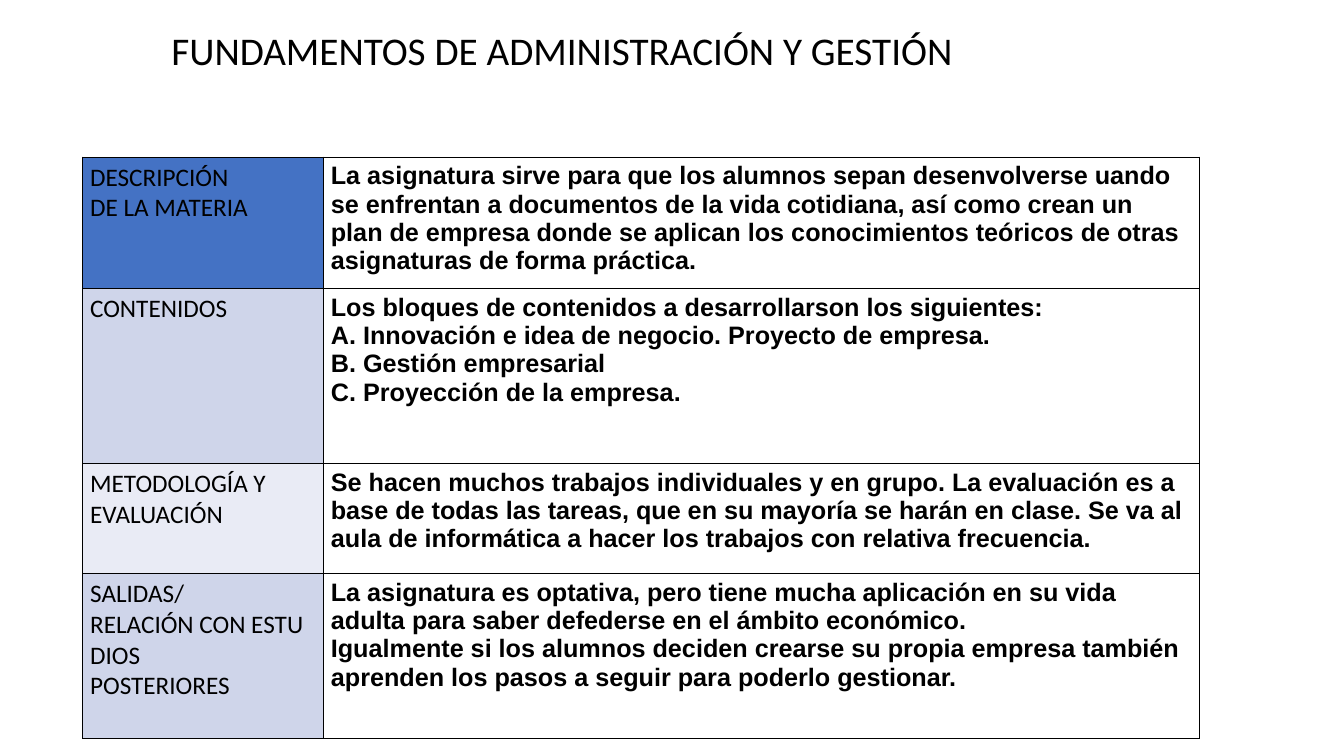
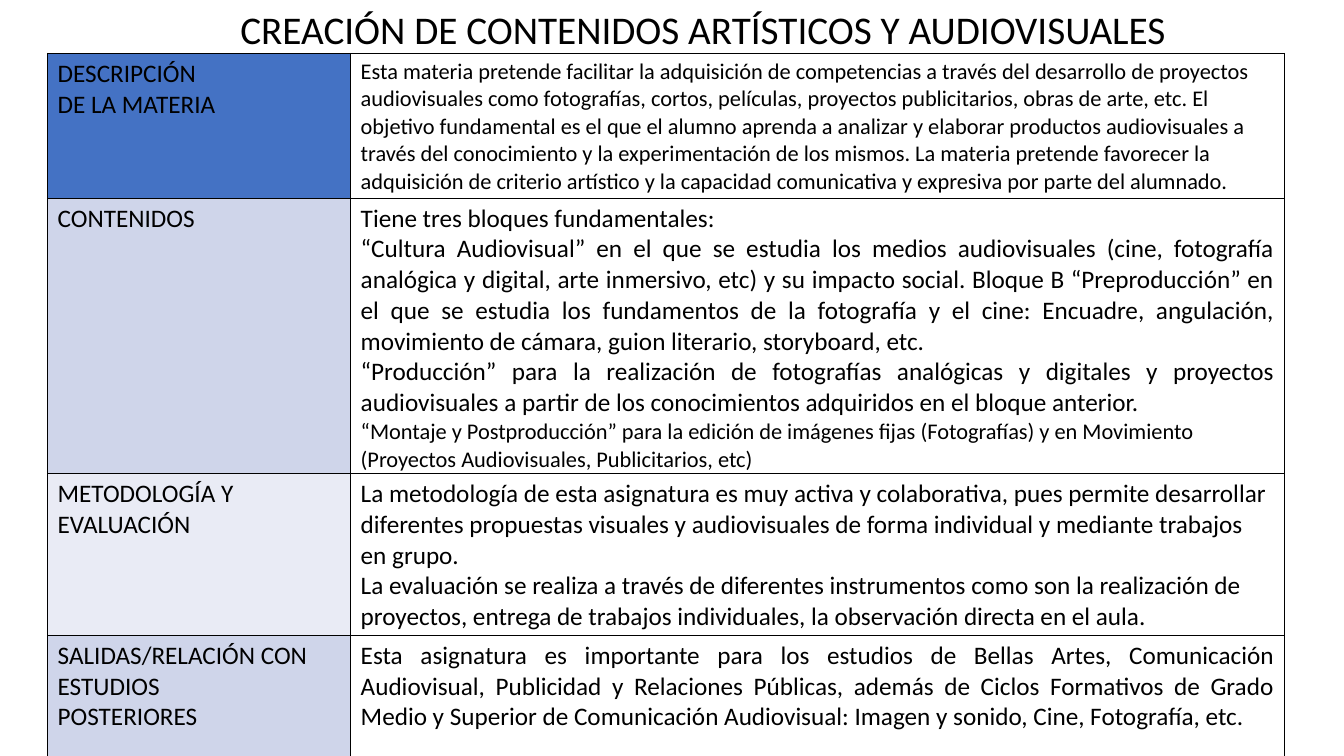
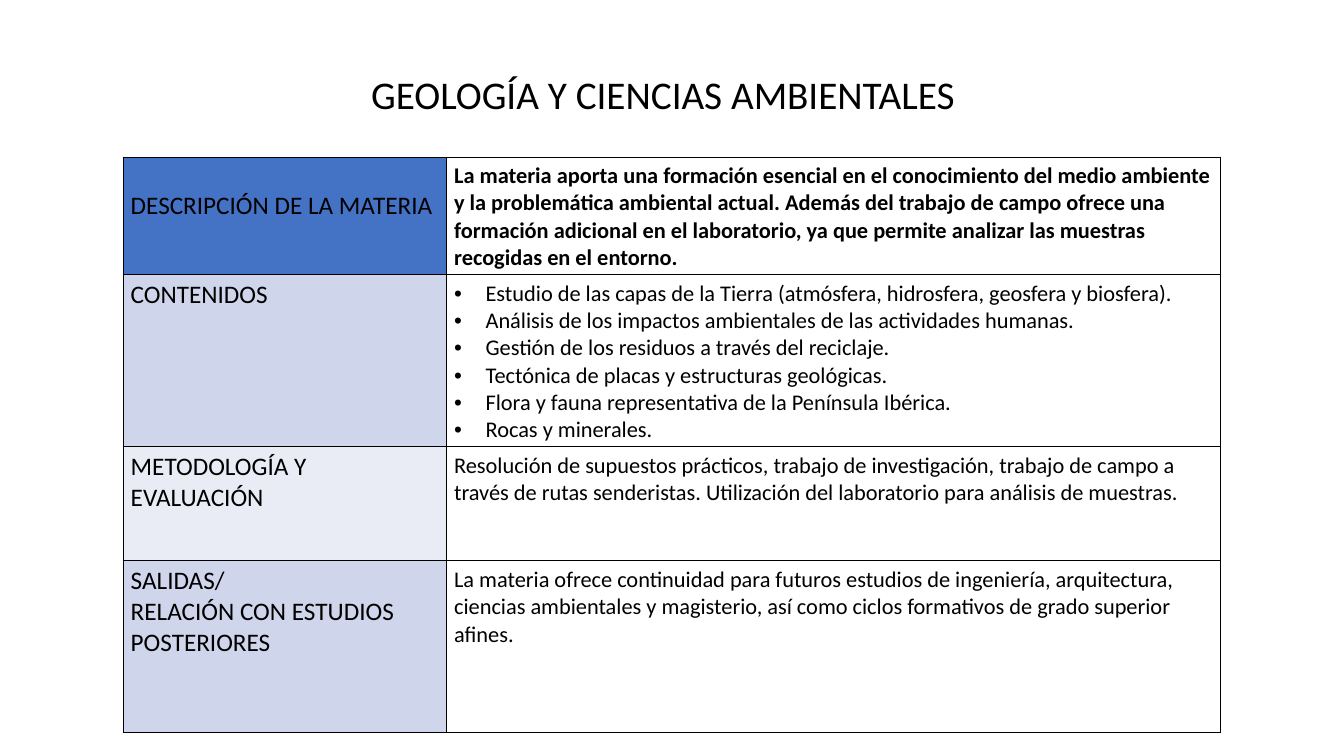
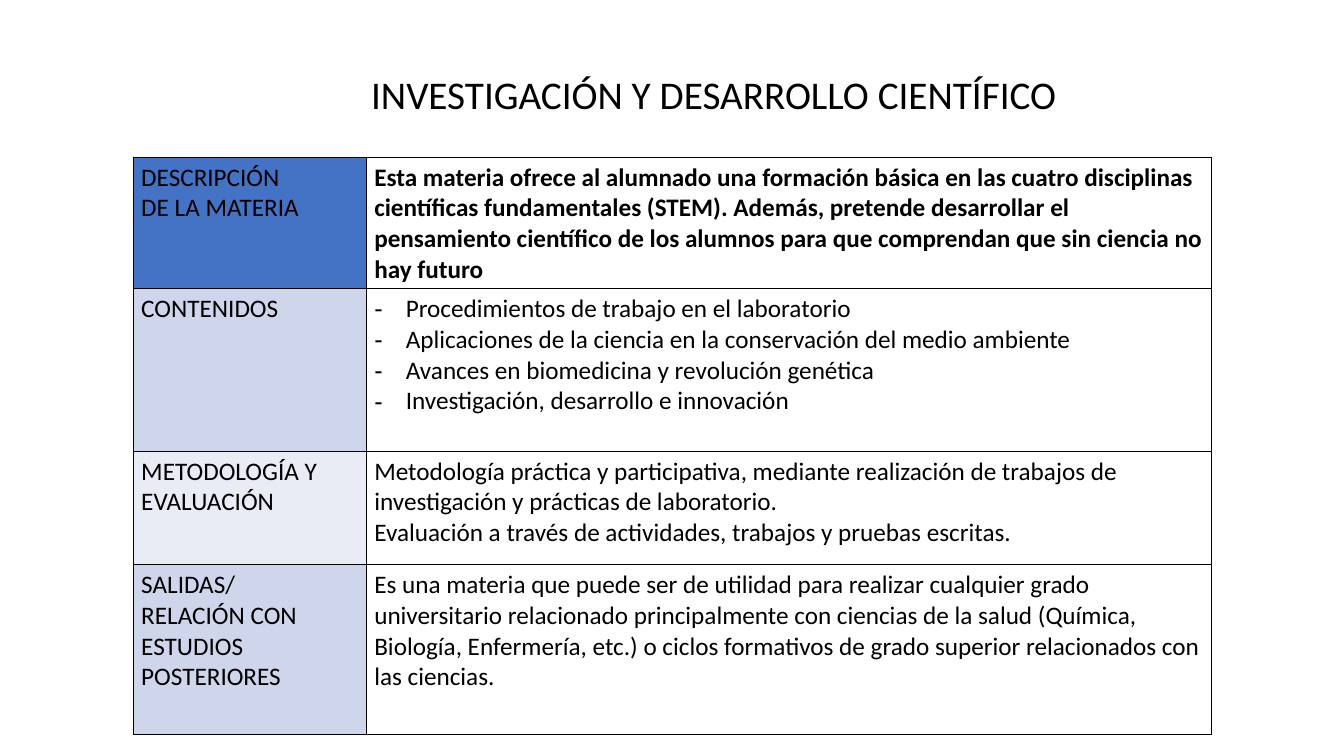
import dataclasses

import lxml.etree
import pptx
import pptx.dml.color
import pptx.enum.text
import pptx.oxml.ns
import pptx.util

Pt = pptx.util.Pt
ALIGN = pptx.enum.text.PP_ALIGN

BLACK = "000000"
LABEL_FILLS = ("4472C4", "CFD5EA", "E9EBF5", "CFD5EA")
BORDER_WIDTH = 0.75
TITLE_SIZE = 28
BULLET_INDENT = 22.5
SIDE_INSET = 5.4
HARD_SPACE = chr(160)

DESCRIPTION = ("DESCRIPCIÓN DE~LA~MATERIA",)
CONTENTS = ("CONTENIDOS",)
METHOD = ("METODOLOGÍA~Y", "EVALUACIÓN")
OUTCOMES = ("SALIDAS/", "RELACIÓN~CON~ESTUDIOS", "POSTERIORES")


@dataclasses.dataclass
class Line:
    """One paragraph with its style."""

    text: str
    size: float = 18
    font: str = "Calibri"
    bold: bool = False
    align: object = None
    bullet: str = ""


def lines(*texts, **style):
    """Give several paragraphs the same style."""
    return [Line(text, **style) for text in texts]


def color(value):
    """Turn a hex string into a colour."""
    return pptx.dml.color.RGBColor.from_string(value)


def add_child(parent, tag, **attributes):
    """Append a DrawingML element."""
    return lxml.etree.SubElement(parent, pptx.oxml.ns.qn(tag), **attributes)


def add_bullet(paragraph, mark):
    """Hang the paragraph from a bullet mark."""
    indent = Pt(BULLET_INDENT)
    properties = paragraph._p.get_or_add_pPr()
    properties.set("marL", str(indent))
    properties.set("indent", str(-indent))
    bullet_color = add_child(properties, "a:buClr")
    add_child(bullet_color, "a:srgbClr", val=BLACK)
    add_child(properties, "a:buFont", typeface="Arial")
    add_child(properties, "a:buChar", char=mark)


def write(frame, content):
    """Fill a text frame with styled paragraphs."""
    for index, line in enumerate(content):
        paragraph = frame.add_paragraph() if index else frame.paragraphs[0]
        if line.align is not None:
            paragraph.alignment = line.align
        if line.bullet:
            add_bullet(paragraph, line.bullet)
        run = paragraph.add_run()
        run.text = line.text.replace("~", HARD_SPACE)
        run.font.size = Pt(line.size)
        run.font.name = line.font
        run.font.bold = line.bold
        run.font.color.rgb = color(BLACK)


def add_title(slide, text, left, top, width, height, align=None):
    """Place the subject name above its table."""
    title = slide.shapes.add_textbox(Pt(left), Pt(top), Pt(width), Pt(height))
    title.text_frame.word_wrap = True
    title.text_frame.auto_size = pptx.enum.text.MSO_AUTO_SIZE.SHAPE_TO_FIT_TEXT
    write(title.text_frame, [Line(text, TITLE_SIZE, align=align)])


def add_borders(cell):
    """Rule all four sides of a cell."""
    properties = cell._tc.get_or_add_tcPr()
    for side in ("a:lnL", "a:lnR", "a:lnT", "a:lnB"):
        border = add_child(properties, side, w=str(Pt(BORDER_WIDTH)))
        fill = add_child(border, "a:solidFill")
        add_child(fill, "a:srgbClr", val=BLACK)


def fill_cell(cell, content, inset, fill=None):
    """Style one cell and write its text."""
    add_borders(cell)
    cell.margin_left = cell.margin_right = Pt(inset)
    if fill:
        cell.fill.solid()
        cell.fill.fore_color.rgb = color(fill)
    else:
        cell.fill.background()
    write(cell.text_frame, content)


def add_subject_table(slide, left, top, widths, heights, rows, inset=SIDE_INSET):
    """Draw the table of labels and explanations for one subject."""
    frame = slide.shapes.add_table(
        len(rows), 2, Pt(left), Pt(top), Pt(sum(widths)), Pt(sum(heights)))
    table = frame.table
    table.first_row = table.horz_banding = False
    for column, width in zip(table.columns, widths):
        column.width = Pt(width)
    for index, (label, body) in enumerate(rows):
        table.rows[index].height = Pt(heights[index])
        fill_cell(table.cell(index, 0), lines(*label), inset, LABEL_FILLS[index])
        fill_cell(table.cell(index, 1), body, inset)
    return table


def add_management(slide):
    """Build the management subject."""
    strong = {"font": "Arial", "bold": True}
    add_title(slide, "FUNDAMENTOS DE ADMINISTRACIÓN Y GESTIÓN",
              110, 15, 582.5, 74, ALIGN.CENTER)
    add_subject_table(slide, 59, 112.2, (172, 625.5), (94, 125, 78.5, 118), [
        (DESCRIPTION, lines(
            "La asignatura sirve para que los alumnos sepan desenvolverse uando se enfrentan a "
            "documentos de la vida cotidiana, así como crean un plan de empresa donde se aplican "
            "los conocimientos teóricos de otras asignaturas de forma práctica.", **strong)),
        (CONTENTS, lines(
            "Los bloques de contenidos a desarrollarson los siguientes:",
            "A. Innovación e idea de negocio. Proyecto de empresa.",
            "B. Gestión empresarial",
            "C. Proyección de la empresa.", align=ALIGN.JUSTIFY, **strong)),
        (METHOD, lines(
            "Se hacen muchos trabajos individuales y en grupo. La evaluación es a base de todas "
            "las tareas, que en su mayoría se harán en clase. Se va al aula de informática a "
            "hacer los trabajos con relativa frecuencia.", **strong)),
        (OUTCOMES, lines(
            "La asignatura es optativa, pero tiene mucha aplicación en su vida adulta para saber "
            "defederse en el ámbito económico.",
            "Igualmente si los alumnos deciden crearse su propia empresa también aprenden los "
            "pasos a seguir para poderlo gestionar.", **strong)),
    ])


def add_audiovisual(slide):
    """Build the audiovisual subject."""
    add_title(slide, "CREACIÓN DE CONTENIDOS ARTÍSTICOS Y AUDIOVISUALES",
              163.5, 0, 677, 74, ALIGN.CENTER)
    add_subject_table(slide, 34, 38, (216.5, 667), (103.5, 196.5, 115.5, 93.5), [
        (DESCRIPTION, lines(
            "Esta materia pretende facilitar la adquisición de competencias a través del "
            "desarrollo de proyectos audiovisuales como fotografías, cortos, películas, "
            "proyectos publicitarios, obras de arte, etc. El objetivo fundamental es el que el "
            "alumno aprenda a analizar y elaborar productos audiovisuales a través del "
            "conocimiento y la experimentación de los mismos. La materia pretende favorecer la "
            "adquisición de criterio artístico y la capacidad comunicativa y expresiva por parte "
            "del alumnado.", size=16)),
        (CONTENTS, lines(
            "Tiene tres bloques fundamentales:",
            "“Cultura Audiovisual” en el que se estudia los medios audiovisuales (cine, "
            "fotografía analógica y digital, arte inmersivo, etc) y su impacto social. Bloque B "
            "“Preproducción” en el que se estudia los fundamentos de la fotografía y el cine: "
            "Encuadre, angulación, movimiento de cámara, guion literario, storyboard, etc.",
            "“Producción” para la realización de fotografías analógicas y digitales y proyectos "
            "audiovisuales a partir de los conocimientos adquiridos en el bloque anterior.",
            align=ALIGN.JUSTIFY) + lines(
            "“Montaje y Postproducción” para la edición de imágenes fijas (Fotografías) y en "
            "Movimiento (Proyectos Audiovisuales, Publicitarios, etc)", size=16)),
        (METHOD, lines(
            "La metodología de esta asignatura es muy activa y colaborativa, pues permite "
            "desarrollar diferentes propuestas visuales y audiovisuales de forma individual y "
            "mediante trabajos en grupo.",
            "La evaluación se realiza a través de diferentes instrumentos como son la "
            "realización de proyectos, entrega de trabajos individuales, la observación directa "
            "en el aula.")),
        (("SALIDAS/RELACIÓN~CON", "ESTUDIOS", "POSTERIORES"), lines(
            "Esta asignatura es importante para los estudios de Bellas Artes, Comunicación "
            "Audiovisual, Publicidad y Relaciones Públicas, además de Ciclos Formativos de Grado "
            "Medio y Superior de Comunicación Audiovisual: Imagen y sonido, Cine, Fotografía, "
            "etc.", align=ALIGN.JUSTIFY)),
    ], inset=7.2)


def add_geology(slide):
    """Build the geology subject."""
    add_title(slide, "GEOLOGÍA Y CIENCIAS AMBIENTALES", 258, 47, 582.5, 41)
    table = add_subject_table(slide, 88, 112.2, (231, 553), (83.5, 123, 81.5, 122.5), [
        (DESCRIPTION, lines(
            "La materia aporta una formación esencial en el conocimiento del medio ambiente y la "
            "problemática ambiental actual. Además del trabajo de campo ofrece una formación "
            "adicional en el laboratorio, ya que permite analizar las muestras recogidas en el "
            "entorno.", size=16, bold=True)),
        (CONTENTS, lines(
            "Estudio de las capas de la Tierra (atmósfera, hidrosfera, geosfera y biosfera).",
            "Análisis de los impactos ambientales de las actividades humanas.",
            "Gestión de los residuos a través del reciclaje.",
            "Tectónica de placas y estructuras geológicas.",
            "Flora y fauna representativa de la Península Ibérica.",
            "Rocas y minerales.", size=16, bullet="•")),
        (METHOD, lines(
            "Resolución de supuestos prácticos, trabajo de investigación, trabajo de campo a "
            "través de rutas senderistas. Utilización del laboratorio para análisis de "
            "muestras.", size=16)),
        (OUTCOMES, lines(
            "La materia ofrece continuidad para futuros estudios de ingeniería, arquitectura, "
            "ciencias ambientales y magisterio, así como ciclos formativos de grado superior "
            "afines.", size=16)),
    ])
    table.cell(0, 0).margin_top = Pt(24)


def add_research(slide):
    """Build the scientific research subject."""
    add_title(slide, "INVESTIGACIÓN Y DESARROLLO CIENTÍFICO", 258, 47, 582.5, 41)
    add_subject_table(slide, 95.5, 112.2, (166.5, 603.5), (94, 116, 81, 121.5), [
        (DESCRIPTION, lines(
            "Esta materia ofrece al alumnado una formación básica en las cuatro disciplinas "
            "científicas fundamentales (STEM). Además, pretende desarrollar el pensamiento "
            "científico de los alumnos para que comprendan que sin ciencia no hay futuro",
            bold=True)),
        (CONTENTS, lines(
            "Procedimientos de trabajo en el laboratorio",
            "Aplicaciones de la ciencia en la conservación del medio ambiente",
            "Avances en biomedicina y revolución genética",
            "Investigación, desarrollo e innovación", bullet="-")),
        (METHOD, lines(
            "Metodología práctica y participativa, mediante realización de trabajos de "
            "investigación y prácticas de laboratorio.",
            "Evaluación a través de actividades, trabajos y pruebas escritas.")),
        (("SALIDAS/", "RELACIÓN~CON", "ESTUDIOS", "POSTERIORES"), lines(
            "Es una materia que puede ser de utilidad para realizar cualquier grado "
            "universitario relacionado principalmente con ciencias de la salud (Química, "
            "Biología, Enfermería, etc.) o ciclos formativos de grado superior relacionados con "
            "las ciencias.")),
    ])


def main():
    """Build and save the presentation."""
    deck = pptx.Presentation()
    deck.slide_width, deck.slide_height = Pt(960), Pt(540)
    blank = deck.slide_layouts[6]
    for add_subject in (add_management, add_audiovisual, add_geology, add_research):
        add_subject(deck.slides.add_slide(blank))
    deck.save("out.pptx")


if __name__ == "__main__":
    main()
